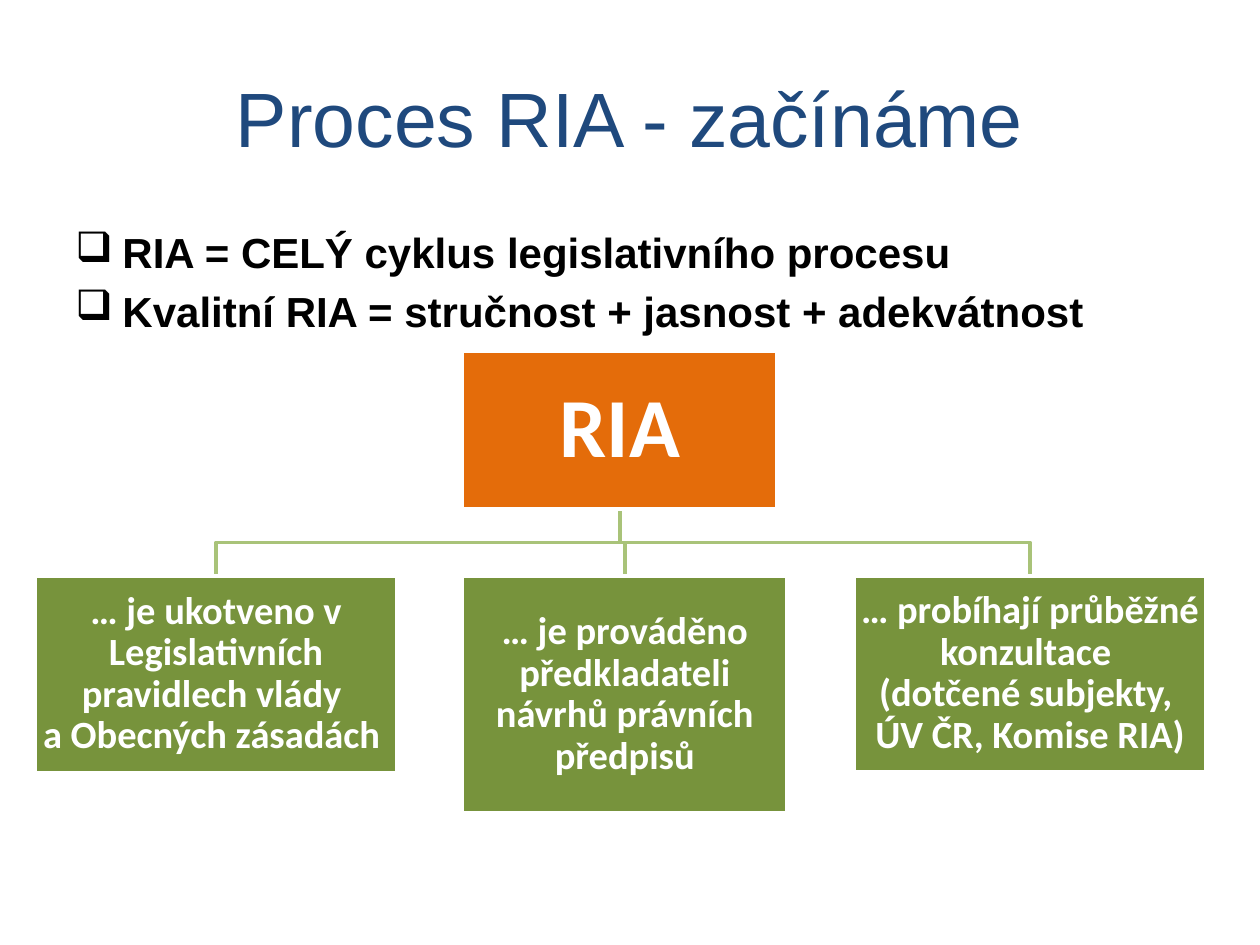
import pptx
import pptx.util
import pptx.dml.color
import pptx.enum.shapes
import pptx.enum.text
import pptx.oxml
import pptx.oxml.ns

Cm, Pt = pptx.util.Cm, pptx.util.Pt
RGB = pptx.dml.color.RGBColor.from_string
ALIGN = pptx.enum.text.PP_ALIGN
ANCHOR = pptx.enum.text.MSO_ANCHOR
RECT = pptx.enum.shapes.MSO_SHAPE.RECTANGLE

# Content; boxes are left, top, width, height in cm
TITLE = "Proces RIA - začínáme"
POINTS = [
    "RIA = CELÝ cyklus legislativního procesu",
    "Kvalitní RIA = stručnost + jasnost + adekvátnost",
]
ROOT = ("RIA", (9.32, 7.09, 6.35, 3.17))
ROW = 11.61
LEAVES = [  # text, left, width, height
    ("… je ukotveno v Legislativních pravidlech vlády \na Obecných zásadách ",
     0.71, 7.29, 3.96),
    ("… je prováděno předkladateli návrhů právních předpisů",
     9.32, 6.55, 4.78),
    ("… probíhají průběžné konzultace \n(dotčené subjekty, \nÚV ČR, Komise RIA)",
     17.22, 7.09, 3.94),
]

THEME = {
    "title": {"name": "Arial", "size": Pt(44), "bold": False, "color": "1F497D"},
    "point": {"name": "Arial", "size": Pt(24), "bold": True, "color": "000000"},
    "root": {"name": "Calibri", "size": Pt(48), "bold": True, "color": "FFFFFF"},
    "leaf": {"name": "Calibri", "size": Pt(22), "bold": True, "color": "FFFFFF"},
    "fill": {"root": "E46C0A", "leaf": "77933C"},
    "edge": "FFFFFF",
    "link": "A9C379",
    "line": Pt(2),
}


def put(item, vals):
    for key, val in vals.items():
        setattr(item, key, val)


def write(para, text, role):
    para.text = text
    for run in para.runs:
        put(run.font, {k: v for k, v in THEME[role].items() if k != "color"})
        run.font.color.rgb = RGB(THEME[role]["color"])


def stroke(shape, color):
    shape.shadow.inherit = False
    shape.line.color.rgb = RGB(color)
    shape.line.width = THEME["line"]


def box(text, place, role, inset):
    shape = slide.shapes.add_shape(RECT, *map(Cm, place))
    stroke(shape, THEME["edge"])
    shape.fill.solid()
    shape.fill.fore_color.rgb = RGB(THEME["fill"][role])
    frame = shape.text_frame
    sides = ("left", "top", "right", "bottom")
    put(frame, {"margin_" + side: Cm(inset) for side in sides})
    put(frame, {"word_wrap": True, "vertical_anchor": ANCHOR.MIDDLE})
    para = frame.paragraphs[0]
    write(para, text, role)
    put(para, {"alignment": ALIGN.CENTER, "line_spacing": 0.9,
               "space_after": int(0.35 * THEME[role]["size"])})


def link(start, end):
    (x1, y1), (x2, y2) = start, end
    mid = (y1 + y2) / 2
    dots = [(Cm(x), Cm(y)) for x, y in [(x1, mid), (x2, mid), (x2, y2)]]
    path = slide.shapes.build_freeform(Cm(x1), Cm(y1))
    path.add_line_segments(dots, close=False)
    shape = path.convert_to_shape()
    shape.fill.background()
    stroke(shape, THEME["link"])


deck = pptx.Presentation()
put(deck, {"slide_width": Cm(25.4), "slide_height": Cm(19.05)})
slide = deck.slides.add_slide(deck.slide_layouts[6])

# Title
frame = slide.shapes.add_textbox(Cm(1.27), Cm(0.76), Cm(22.86), Cm(3.18)).text_frame
put(frame, {"word_wrap": True, "vertical_anchor": ANCHOR.MIDDLE})
write(frame.paragraphs[0], TITLE, "title")
frame.paragraphs[0].alignment = ALIGN.CENTER

# Bullet points
frame = slide.shapes.add_textbox(Cm(1.27), Cm(4.45), Cm(22.86), Cm(12.57)).text_frame
frame.word_wrap = True
for i, text in enumerate(POINTS):
    para = frame.add_paragraph() if i else frame.paragraphs[0]
    props = para._p.get_or_add_pPr()
    put_in = {"marL": Cm(0.95), "indent": -Cm(0.95)}
    for key, val in put_in.items():
        props.set(key, str(int(val)))
    props.append(pptx.oxml.parse_xml(
        '<a:buChar %s char="❑"/>' % pptx.oxml.ns.nsdecls("a")))
    write(para, text, "point")
    if i:
        para.space_before = Pt(4.8)

# Tree: links lie behind the boxes
left, top, width, height = ROOT[1]
for text, x, w, h in reversed(LEAVES):
    link((left + width / 2, top + height), (x + w / 2, ROW))
box(*ROOT, "root", 0.08)
for text, x, w, h in LEAVES:
    box(text, (x, ROW, w, h), "leaf", 0.05)

deck.save("out.pptx")
